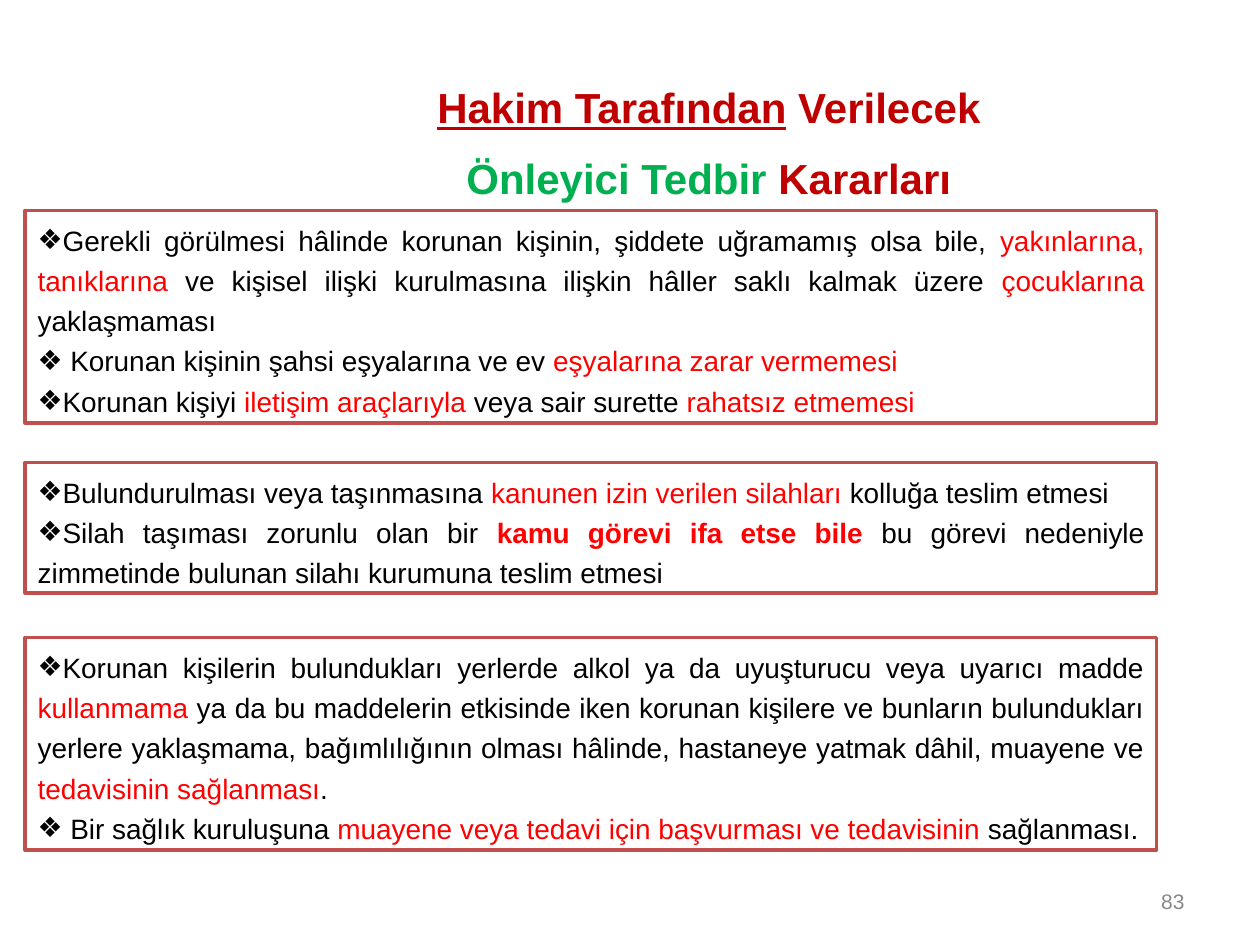
"""Build the slide on preventive measures ordered by a judge."""
from lxml import etree
from pptx import Presentation
from pptx.dml.color import RGBColor
from pptx.enum.shapes import MSO_SHAPE
from pptx.enum.text import MSO_ANCHOR, MSO_AUTO_SIZE, PP_ALIGN
from pptx.oxml.ns import qn
from pptx.util import Cm, Pt

RECTANGLE = MSO_SHAPE.RECTANGLE
TOP, MIDDLE = MSO_ANCHOR.TOP, MSO_ANCHOR.MIDDLE
GROW, FIXED = MSO_AUTO_SIZE.SHAPE_TO_FIT_TEXT, MSO_AUTO_SIZE.NONE
CENTER, RIGHT, JUSTIFY = PP_ALIGN.CENTER, PP_ALIGN.RIGHT, PP_ALIGN.JUSTIFY

BLACK = RGBColor(0x00, 0x00, 0x00)
WHITE = RGBColor(0xFF, 0xFF, 0xFF)
RED = RGBColor(0xFF, 0x00, 0x00)
DARK_RED = RGBColor(0xC0, 0x00, 0x00)
GREEN = RGBColor(0x00, 0xB0, 0x50)
BRICK = RGBColor(0xC0, 0x50, 0x4D)
GRAY = RGBColor(0x89, 0x89, 0x89)

CONTACT_MEASURES = [
    [("Gerekli görülmesi hâlinde korunan kişinin, şiddete uğramamış olsa bile, ", {}),
     ("yakınlarına, tanıklarına ", {"color": RED}),
     ("ve kişisel ilişki kurulmasına ilişkin hâller saklı kalmak üzere ", {}),
     ("çocuklarına", {"color": RED}),
     (" yaklaşmaması", {})],
    [(" Korunan kişinin şahsi eşyalarına ve ev ", {}),
     ("eşyalarına zarar vermemesi", {"color": RED})],
    [("Korunan kişiyi ", {}),
     ("iletişim araçlarıyla ", {"color": RED}),
     ("veya sair surette ", {}),
     ("rahatsız etmemesi", {"color": RED})],
]
WEAPON_MEASURES = [
    [("Bulundurulması veya taşınmasına ", {}),
     ("kanunen izin verilen silahları ", {"color": RED}),
     ("kolluğa teslim etmesi", {})],
    [("Silah taşıması zorunlu olan bir ", {}),
     ("kamu görevi ifa etse bile ", {"color": RED, "bold": True}),
     ("bu görevi nedeniyle zimmetinde bulunan silahı kurumuna teslim etmesi", {})],
]
TREATMENT_MEASURES = [
    [("Korunan kişilerin bulundukları yerlerde alkol ya da uyuşturucu veya uyarıcı madde ", {}),
     ("kullanmama", {"color": RED}),
     (" ya da bu maddelerin etkisinde iken korunan kişilere ve bunların bulundukları "
      "yerlere yaklaşmama, bağımlılığının olması hâlinde, hastaneye yatmak dâhil, "
      "muayene ve ", {}),
     ("tedavisinin sağlanması", {"color": RED}),
     (".", {})],
    [(" Bir sağlık kuruluşuna ", {}),
     ("muayene veya tedavi için başvurması ve tedavisinin ", {"color": RED}),
     ("sağlanması.", {})],
]
HEADING = [[
    ("Hakim Tarafından", {"underline": True}),
    (" Verilecek ", {}),
    ("Önleyici Tedbir", {"color": GREEN}),
    (" Kararları", {}),
]]


def write(paragraph, text, size=16, color=BLACK, bold=False, underline=False, font="Arial"):
    """Add one formatted run to a paragraph."""
    run = paragraph.add_run()
    run.text = text
    run.font.name = font
    run.font.size = Pt(size)
    run.font.color.rgb = color
    run.font.bold = bold
    run.font.underline = underline


class MeasuresSlide:
    """Hold the style and the current slide."""

    bullet = "❖"
    border_width = Pt(2)
    box_left, box_width = Cm(0.51), Cm(22.81)

    def __init__(self, slide):
        """Keep the slide to draw on."""
        self.slide = slide

    def fill_text(self, frame, paragraphs, align, spacing=1.0, anchor=TOP,
                  auto_size=GROW, bulleted=False, **style):
        """Write paragraphs of runs into a text frame."""
        frame.word_wrap = True
        frame.auto_size = auto_size
        frame.vertical_anchor = anchor
        for index, runs in enumerate(paragraphs):
            paragraph = frame.add_paragraph() if index else frame.paragraphs[0]
            paragraph.alignment = align
            paragraph.line_spacing = spacing
            if bulleted:
                properties = paragraph._p.get_or_add_pPr()
                etree.SubElement(properties, qn("a:buFont")).set("typeface", "Arial")
                etree.SubElement(properties, qn("a:buChar")).set("char", self.bullet)
            for text, changes in runs:
                write(paragraph, text, **{**style, **changes})

    def label(self, left, top, width, height, paragraphs, **layout):
        """Add a plain text box."""
        label = self.slide.shapes.add_textbox(left, top, width, height)
        self.fill_text(label.text_frame, paragraphs, **layout)

    def measures(self, top, height, paragraphs):
        """Add a bordered box of bulleted measures."""
        box = self.slide.shapes.add_shape(
            RECTANGLE, self.box_left, top, self.box_width, height)
        box.shadow.inherit = False
        box.fill.solid()
        box.fill.fore_color.rgb = WHITE
        box.line.color.rgb = BRICK
        box.line.width = self.border_width
        self.fill_text(box.text_frame, paragraphs, JUSTIFY, spacing=1.2, bulleted=True)


def main():
    """Build and save the presentation."""
    deck = Presentation()
    deck.slide_width, deck.slide_height = Cm(25.4), Cm(19.05)
    page = MeasuresSlide(deck.slides.add_slide(deck.slide_layouts[6]))

    page.label(Cm(7.29), Cm(1.12), Cm(14), Cm(2.97), HEADING,
               align=CENTER, spacing=1.4, size=24, color=DARK_RED, bold=True)
    page.measures(Cm(4.24), Cm(4.29), CONTACT_MEASURES)
    page.measures(Cm(9.32), Cm(2.64), WEAPON_MEASURES)
    page.measures(Cm(12.85), Cm(4.29), TREATMENT_MEASURES)
    page.label(Cm(18.21), Cm(17.65), Cm(5.92), Cm(1.02), [[("83", {})]],
               align=RIGHT, anchor=MIDDLE, auto_size=FIXED, size=12, color=GRAY)

    deck.save("out.pptx")


if __name__ == "__main__":
    main()
